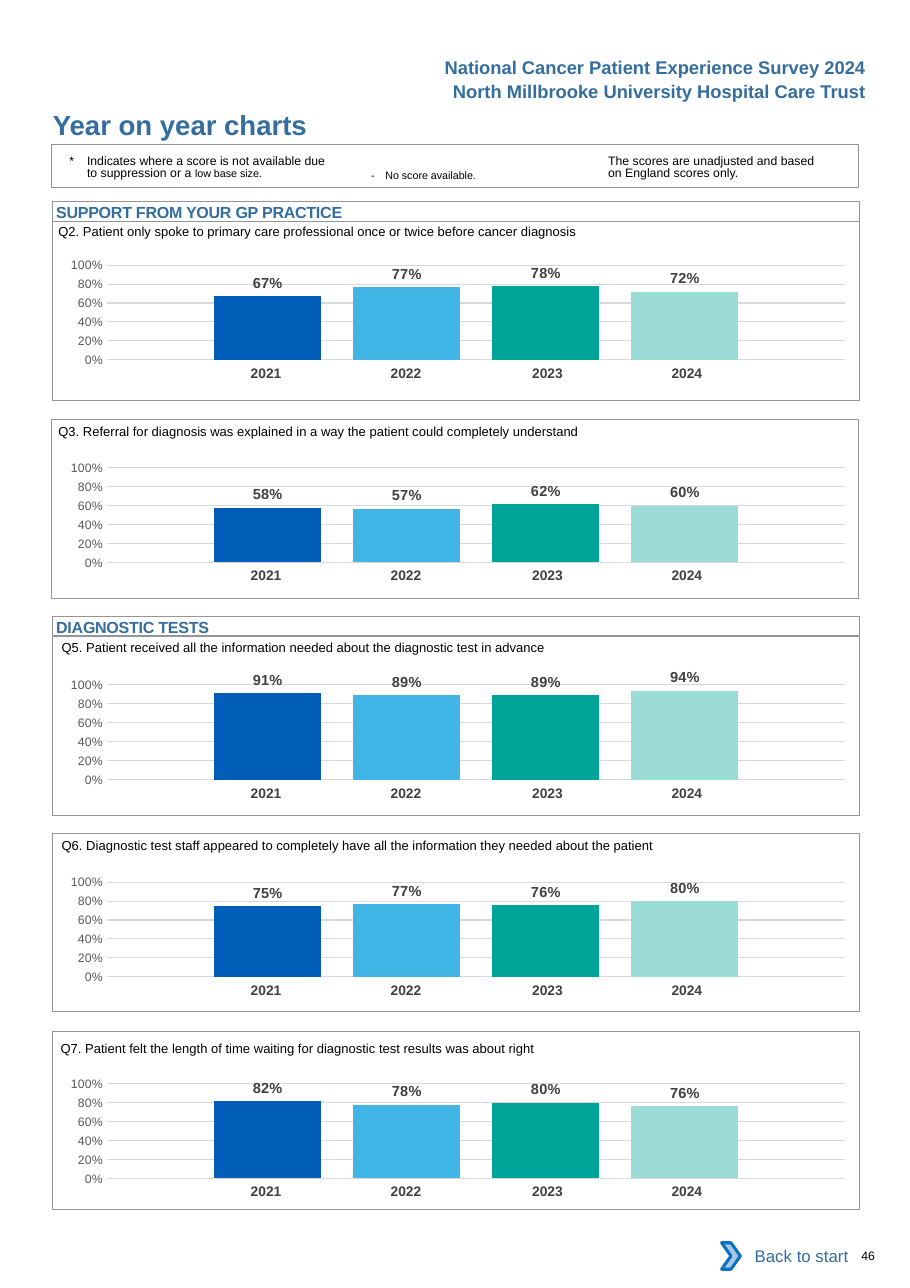
import dataclasses
import typing

import lxml.etree
import pptx
import pptx.chart.data
import pptx.dml.color
import pptx.enum.chart
import pptx.enum.shapes
import pptx.enum.text
import pptx.oxml
import pptx.oxml.ns
import pptx.util

PX = 9144
BLUE = "336E9F"
GREY = "939598"
BLACK = "000000"
YEARS = ("2021", "2022", "2023", "2024")
YEAR_WIDTHS = (127, 127, 134, 127)
YEAR_RIGHT_MARGINS = (0, 0, 4, 12)
BAR_COLORS = ("005EB8", "41B6E6", "00A499", "9CDCD7")
PLOT_BOX = {"x": 0.08, "y": 0.145, "w": 0.915, "h": 0.666}
NO_TABLE_STYLE = "{2D5ABB26-0587-4C30-8999-92F81FD0307C}"
ALIGN = pptx.enum.text.PP_ALIGN
ANCHOR = pptx.enum.text.MSO_ANCHOR
SHAPE = pptx.enum.shapes.MSO_SHAPE


class Box(typing.NamedTuple):
    x: int
    y: int
    w: int
    h: int


@dataclasses.dataclass(frozen=True)
class Style:
    size: float
    color: str = BLACK
    bold: bool = False
    align: ALIGN = ALIGN.LEFT
    anchor: ANCHOR = ANCHOR.TOP
    margins: tuple[int, int, int, int] = (0, 0, 0, 0)
    wrap: bool = True
    hanging: int = 0
    line_points: float | None = None
    tracking: int = 0


@dataclasses.dataclass(frozen=True)
class Label:
    box: Box
    text: str
    style: Style
    small_ending: str = ""


@dataclasses.dataclass(frozen=True)
class Panel:
    question: str
    question_box: Box
    frame_x: int
    frame_y: int
    chart_y: int
    scores: tuple[float, float, float, float]


HEADER = Style(12, BLUE, True, ALIGN.RIGHT, margins=(10, 5, 10, 5), wrap=False)
QUESTION = Style(8.5, margins=(1, 9, 0, 0))
SECTION = Style(10.5, BLUE, True, margins=(3, 1, 0, 0), tracking=-15)
NOTE = Style(8, margins=(0, 3, 0, 0), line_points=8.1)
HANGING_NOTE = dataclasses.replace(NOTE, hanging=16)
NO_SCORE = Style(7, margins=(10, 12, 0, 0), hanging=13)
BACK = Style(11, BLUE, align=ALIGN.RIGHT, anchor=ANCHOR.MIDDLE, margins=(10, 5, 10, 5))

LABELS = (
    Label(Box(392, 46, 404, 30), "National Cancer Patient Experience Survey 2024", HEADER),
    Label(Box(401, 68, 395, 30), "North Millbrooke University Hospital Care Trust", HEADER),
    Label(Box(47, 96, 450, 30), "Year on year charts", Style(18, BLUE, True, margins=(1, 2, 0, 0))),
    Label(Box(63, 138, 272, 27), "*\tIndicates where a score is not available due\vto suppression or a ",
          HANGING_NOTE, "low base size."),
    Label(Box(327, 141, 183, 24), "-\tNo score available.", NO_SCORE),
    Label(Box(552, 138, 201, 27), "The scores are unadjusted and based on England scores only.", NOTE),
    Label(Box(772, 1133, 51, 13), "46", Style(8, margins=(10, 0, 0, 0))),
)
SECTIONS = (
    Label(Box(48, 183, 732, 18), "SUPPORT FROM YOUR GP PRACTICE", SECTION),
    Label(Box(48, 559, 732, 18), "DIAGNOSTIC TESTS", SECTION),
)
PANELS = (
    Panel("Q2. Patient only spoke to primary care professional once or twice before cancer diagnosis",
          Box(52, 194, 721, 24), 48, 201, 222, (0.67, 0.77, 0.78, 0.72)),
    Panel("Q3. Referral for diagnosis was explained in a way the patient could completely understand",
          Box(52, 375, 474, 46), 47, 381, 406, (0.58, 0.57, 0.62, 0.60)),
    Panel("Q5. Patient received all the information needed about the diagnostic test in advance",
          Box(55, 571, 440, 24), 48, 578, 603, (0.91, 0.89, 0.89, 0.94)),
    Panel("Q6. Diagnostic test staff appeared to completely have all the information they needed about the patient",
          Box(55, 751, 726, 24), 48, 756, 782, (0.75, 0.77, 0.76, 0.80)),
    Panel("Q7. Patient felt the length of time waiting for diagnostic test results was about right",
          Box(54, 935, 441, 24), 48, 936, 965, (0.82, 0.78, 0.80, 0.76)),
)


def rgb(color: str) -> pptx.dml.color.RGBColor:
    return pptx.dml.color.RGBColor.from_string(color)


def emu(box: Box) -> list[int]:
    return [v * PX for v in box]


def set_font(font, size: float, color: str, bold: bool = False) -> None:
    font.name, font.size, font.bold = "Arial", pptx.util.Pt(size), bold
    font.color.rgb = rgb(color)


def write(tf, text: str, style: Style, small_ending: str = "") -> None:
    tf.word_wrap = style.wrap
    tf.vertical_anchor = style.anchor
    tf.margin_left, tf.margin_top, tf.margin_right, tf.margin_bottom = (m * PX for m in style.margins)
    tf.text = text
    p = tf.paragraphs[0]
    p.alignment = style.align
    if style.line_points:
        p.line_spacing = pptx.util.Pt(style.line_points)
    if style.hanging:
        pPr = p._p.get_or_add_pPr()
        pPr.set("marL", str(style.hanging * PX))
        pPr.set("indent", str(-style.hanging * PX))
    for r in p.runs:
        set_font(r.font, style.size, style.color, style.bold)
        if style.tracking:
            r._r.get_or_add_rPr().set("spc", str(style.tracking))
    if small_ending:
        r = p.add_run()
        r.text = small_ending
        set_font(r.font, 7, style.color)


def add_label(s, label: Label) -> None:
    sp = s.shapes.add_textbox(*emu(label.box))
    write(sp.text_frame, label.text, label.style, label.small_ending)


def add_outline(s, box: Box, fill: str | None = None, line: str | None = GREY,
                width: float = 0.5, kind: SHAPE = SHAPE.RECTANGLE):
    sp = s.shapes.add_shape(kind, *emu(box))
    sp.shadow.inherit = False
    if fill:
        sp.fill.solid()
        sp.fill.fore_color.rgb = rgb(fill)
    else:
        sp.fill.background()
    if line:
        sp.line.color.rgb = rgb(line)
        sp.line.width = pptx.util.Pt(width)
    else:
        sp.line.fill.background()
    return sp


def add_years(s, y: int) -> None:
    frame = s.shapes.add_table(1, len(YEARS), *emu(Box(173, y, sum(YEAR_WIDTHS), 27)))
    table = frame.table
    table.first_row = table.horz_banding = False
    next(frame.element.iter(pptx.oxml.ns.qn("a:tableStyleId"))).text = NO_TABLE_STYLE
    for i, (year, width, right) in enumerate(zip(YEARS, YEAR_WIDTHS, YEAR_RIGHT_MARGINS)):
        table.columns[i].width = width * PX
        cell = table.cell(0, i)
        cell.fill.background()
        cell.margin_left, cell.margin_top, cell.margin_right, cell.margin_bottom = (
            m * PX for m in (10, 5, right, 5))
        cell.text_frame.text = year
        p = cell.text_frame.paragraphs[0]
        p.alignment = ALIGN.CENTER
        set_font(p.runs[0].font, 9, "414042", True)


def set_plot_box(chart) -> None:
    area = next(chart.element.iter(pptx.oxml.ns.qn("c:plotArea")))
    for old in area.findall(pptx.oxml.ns.qn("c:layout")):
        area.remove(old)
    parts = '<c:layoutTarget val="inner"/><c:xMode val="edge"/><c:yMode val="edge"/>'
    parts += "".join(f'<c:{k} val="{v}"/>' for k, v in PLOT_BOX.items())
    ns = pptx.oxml.ns.nsdecls("c")
    area.insert(0, pptx.oxml.parse_xml(
        f"<c:layout {ns}><c:manualLayout>{parts}</c:manualLayout></c:layout>"))


def add_scores(s, panel: Panel) -> None:
    data = pptx.chart.data.CategoryChartData(number_format="0%")
    data.categories = ["1"]
    for i, score in enumerate(panel.scores, 1):
        data.add_series(f"Series {i}", [score])
    kind = pptx.enum.chart.XL_CHART_TYPE.COLUMN_CLUSTERED
    chart = s.shapes.add_chart(kind, *emu(Box(39, panel.chart_y, 732, 129)), data).chart
    chart.has_legend = chart.has_title = False
    chart.font.name, chart.font.size = "Calibri", pptx.util.Pt(10)
    chart.font.color.rgb = rgb(BLACK)
    chart.category_axis.visible = False
    axis = chart.value_axis
    axis.minimum_scale, axis.maximum_scale, axis.major_unit = 0, 1, 0.2
    axis.major_tick_mark = axis.minor_tick_mark = pptx.enum.chart.XL_TICK_MARK.NONE
    axis.format.line.fill.background()
    axis.major_gridlines.format.line.color.rgb = rgb("D9D9D9")
    axis.major_gridlines.format.line.width = pptx.util.Pt(0.75)
    axis.tick_labels.number_format, axis.tick_labels.number_format_is_linked = "0%", False
    set_font(axis.tick_labels.font, 8, "595959")
    plot = chart.plots[0]
    plot.gap_width, plot.overlap, plot.vary_by_categories = 200, -30, False
    for series, color in zip(plot.series, BAR_COLORS):
        series.format.fill.solid()
        series.format.fill.fore_color.rgb = rgb(color)
        labels = series.data_labels
        labels.show_value = True
        labels.position = pptx.enum.chart.XL_LABEL_POSITION.OUTSIDE_END
        labels.number_format, labels.number_format_is_linked = "0%", False
        set_font(labels.font, 9.5, "404040", True)
    set_plot_box(chart)


def main() -> None:
    prs = pptx.Presentation()
    prs.slide_width, prs.slide_height = 826 * PX, 1169 * PX
    s = prs.slides.add_slide(prs.slide_layouts[6])
    add_outline(s, Box(47, 131, 732, 39), width=0.75)
    for label in LABELS:
        add_label(s, label)
    for section in SECTIONS:
        write(add_outline(s, section.box).text_frame, section.text, section.style)
    for panel in PANELS:
        add_label(s, Label(panel.question_box, panel.question, QUESTION))
        add_years(s, panel.chart_y + 105)
        add_scores(s, panel)
        add_outline(s, Box(panel.frame_x, panel.frame_y, 732, 162))
    back = add_outline(s, Box(662, 1119, 118, 42), "FFFFFF", None)
    write(back.text_frame, "Back to start", BACK)
    add_outline(s, Box(655, 1128, 17, 24), "A8C7E9", "0A74BB", 2, SHAPE.CHEVRON)
    prs.save("out.pptx")


if __name__ == "__main__":
    main()
